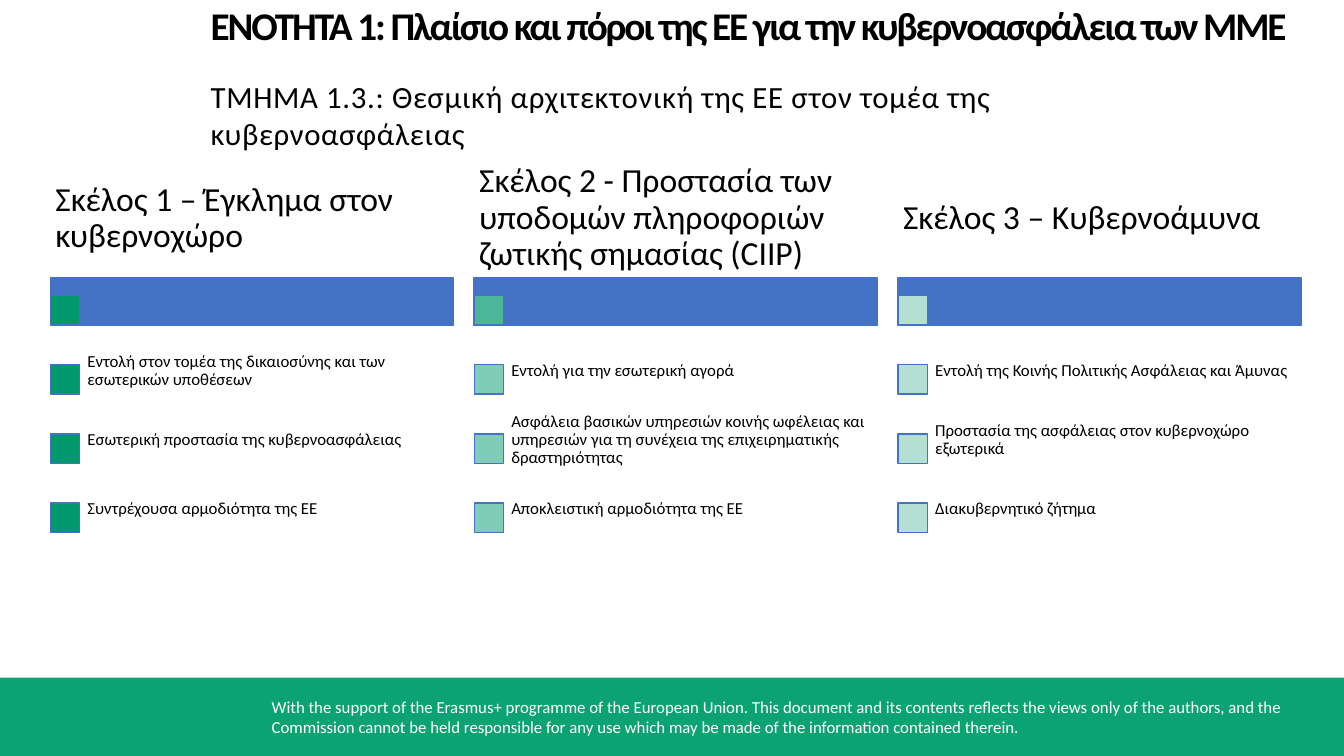
from pptx import Presentation
from pptx.dml.color import RGBColor
from pptx.enum.shapes import MSO_SHAPE
from pptx.enum.text import MSO_ANCHOR, PP_ALIGN
from pptx.util import Pt

RECT = MSO_SHAPE.RECTANGLE
TOP, MIDDLE = MSO_ANCHOR.TOP, MSO_ANCHOR.MIDDLE
LEFT = PP_ALIGN.LEFT
SLIDE_W, SLIDE_H = 960, 540
BLUE, GREEN = "4472C4", "0CA373"

TITLE = "ΕΝΟΤΗΤΑ 1: Πλαίσιο και πόροι της ΕΕ για την κυβερνοασφάλεια των ΜΜΕ"
SUBTITLE = "ΤΜΗΜΑ 1.3.: Θεσμική αρχιτεκτονική της ΕΕ στον τομέα της κυβερνοασφάλειας"
FOOTER = ("With the support of the Erasmus+ programme of the European Union. "
          "This document and its contents reflects the views only of the authors, "
          "and the Commission cannot be held responsible for any use which may be "
          "made of the information contained therein.")
# heading, bar marker colour, item marker colour, items
PILLARS = [
    ("Σκέλος 1 – Έγκλημα στον κυβερνοχώρο", "00986C", "00986C",
     ["Εντολή στον τομέα της δικαιοσύνης και των εσωτερικών υποθέσεων",
      "Εσωτερική προστασία της κυβερνοασφάλειας",
      "Συντρέχουσα αρμοδιότητα της ΕΕ"]),
    ("Σκέλος 2 - Προστασία των υποδομών πληροφοριών ζωτικής σημασίας (CIIP)",
     "4CB798", "80CCB6",
     ["Εντολή για την εσωτερική αγορά",
      "Ασφάλεια βασικών υπηρεσιών κοινής ωφέλειας και υπηρεσιών για τη "
      "συνέχεια της επιχειρηματικής δραστηριότητας",
      "Αποκλειστική αρμοδιότητα της ΕΕ"]),
    ("Σκέλος 3 – Κυβερνοάμυνα", "B3E0D3", "B3E0D3",
     ["Εντολή της Κοινής Πολιτικής Ασφάλειας και Άμυνας",
      "Προστασία της ασφάλειας στον κυβερνοχώρο εξωτερικά",
      "Διακυβερνητικό ζήτημα"]),
]


def rgb(value):
    return RGBColor.from_string(value)


def place(shape, box):
    for name, value in zip(("left", "top", "width", "height"), box):
        setattr(shape, name, Pt(value))


def write(shape, text, size, color="000000", inset=(0, 0), anchor=TOP,
          spacing=None, tracking=0, bold=False):
    """Fill a shape with one paragraph; inset is (sides, top and bottom)."""
    tf = shape.text_frame
    side, end = map(Pt, inset)
    frame_format = {"word_wrap": True, "vertical_anchor": anchor,
                    "margin_left": side, "margin_right": side,
                    "margin_top": end, "margin_bottom": end}
    for name, value in frame_format.items():
        setattr(tf, name, value)
    p = tf.paragraphs[0]
    p.alignment = LEFT
    p.line_spacing = spacing
    r = p.add_run()
    r.text = text
    for name, value in {"name": "Calibri", "size": Pt(size), "bold": bold}.items():
        setattr(r.font, name, value)
    r.font.color.rgb = rgb(color)
    if tracking:
        r.font._element.set("spc", str(round(tracking * 100)))


def add_text(s, box, text, size, **style):
    write(s.shapes.add_textbox(*map(Pt, box)), text, size, **style)


def add_rect(s, box, fill, line=None):
    sp = s.shapes.add_shape(RECT, *map(Pt, box))
    sp.shadow.inherit = False
    sp.fill.solid()
    sp.fill.fore_color.rgb = rgb(fill)
    if line:
        sp.line.color.rgb = rgb(line)
        sp.line.width = Pt(1)
    else:
        sp.line.fill.background()


def add_header(s, x, y, w):
    place(s.shapes.title, (x, y, w, 70))
    write(s.shapes.title, TITLE, 28, inset=(0, 1), tracking=-1.5, bold=True)
    add_text(s, (x, y + 54, 682.5, 77), SUBTITLE, 22, inset=(0, 1.5),
             spacing=Pt(26.4), tracking=0.5)


def add_pillar(s, x, y, w, pillar):
    heading, bar_marker, item_marker, items = pillar
    marker, row_h, indent = 21, 49.4, 20
    add_rect(s, (x, y + 73, w, 34), BLUE, BLUE)
    add_rect(s, (x, y + 85.5, marker, marker), bar_marker, BLUE)
    add_text(s, (x, y, w, 61), heading, 24, inset=(3.6, 2),
             anchor=MIDDLE, spacing=0.9)
    for i, item in enumerate(items):
        row_y = y + 114.5 + i * row_h
        add_rect(s, (x, row_y + 20.5, marker, marker), item_marker, BLUE)
        add_text(s, (x + indent, row_y, w - indent, row_h), item, 12,
                 inset=(6.5, 6.5), anchor=MIDDLE, spacing=0.9)


def add_footer(s, y):
    add_rect(s, (0, y, SLIDE_W, SLIDE_H - y), GREEN)
    add_text(s, (187, y + 10, 750, 36), FOOTER, 12, color="FFFFFF",
             inset=(7.2, 3.6))


def main():
    prs = Presentation()
    prs.slide_width, prs.slide_height = Pt(SLIDE_W), Pt(SLIDE_H)
    s = prs.slides.add_slide(prs.slide_layouts[5])
    add_footer(s, 484)
    add_header(s, 150.5, 0, 885.5)
    for i, pillar in enumerate(PILLARS):
        add_pillar(s, 36 + i * 302.75, 125.5, 288, pillar)
    prs.save("out.pptx")


if __name__ == "__main__":
    main()
